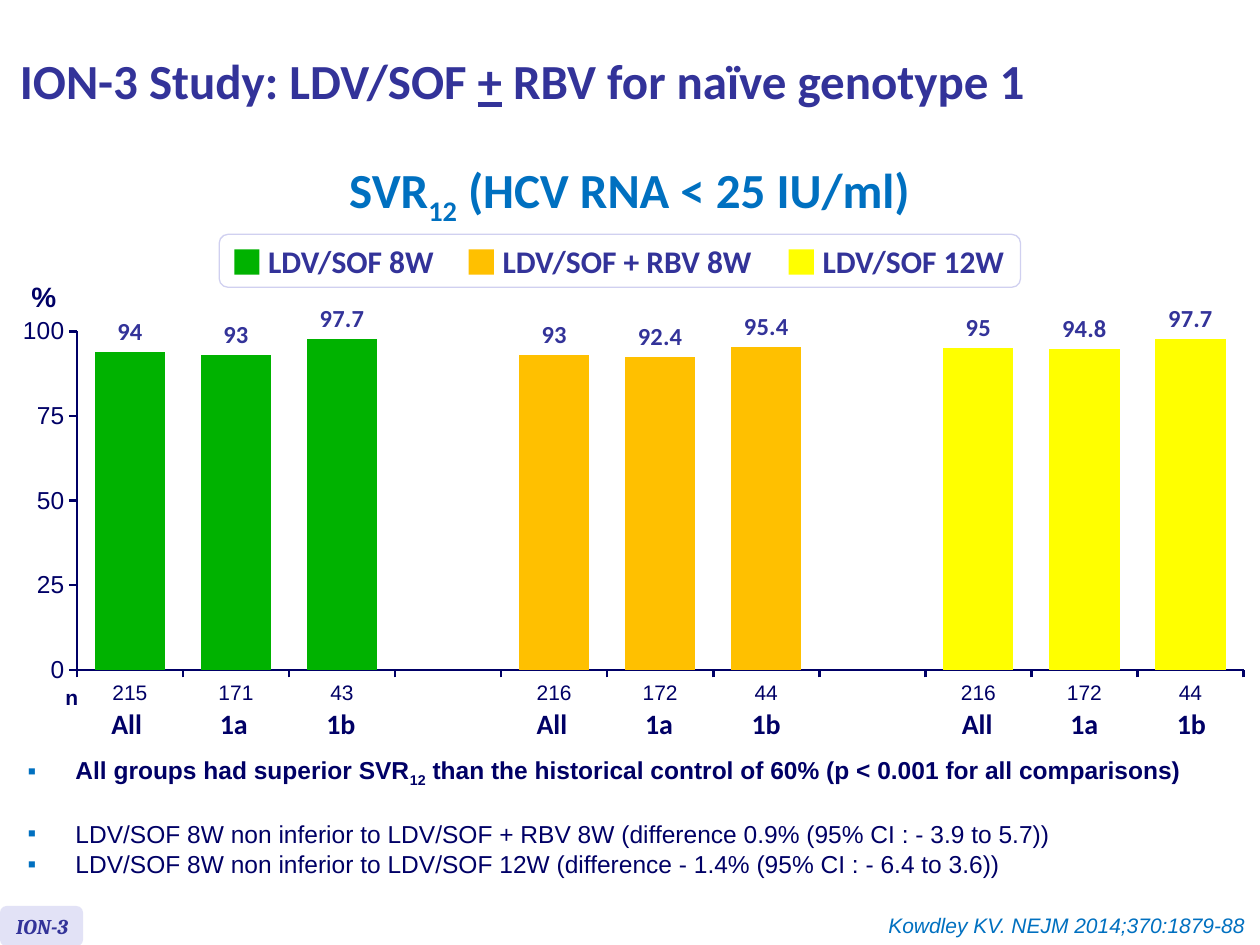
"""Build the ION-3 study slide comparing SVR12 rates across three regimens."""
from lxml import etree
from pptx import Presentation
from pptx.chart.data import CategoryChartData
from pptx.dml.color import RGBColor
from pptx.enum.chart import XL_CHART_TYPE, XL_LABEL_POSITION, XL_TICK_MARK
from pptx.enum.shapes import MSO_SHAPE
from pptx.enum.text import MSO_ANCHOR, PP_ALIGN
from pptx.oxml import parse_xml
from pptx.oxml.ns import nsdecls, qn
from pptx.util import Inches, Pt

COLORS = {
    "white": "FFFFFF",
    "indigo": "333399",
    "navy": "000066",
    "blue": "0070C0",
    "badge": "E2E2F6",
    "frame": "D0D0F0",
    "green": "00B200",
    "orange": "FFC000",
    "yellow": "FFFF00",
}
REGIMENS = [
    ("LDV/SOF 8W", "green", 1.86, 1.53, (215, 171, 43), (94, 93, 97.7)),
    ("LDV/SOF + RBV 8W", "orange", 3.72, 2.2, (216, 172, 44), (93, 92.4, 95.4)),
    ("LDV/SOF 12W", "yellow", 6.26, 1.66, (216, 172, 44), (95, 94.8, 97.7)),
]
GENOTYPES = ["All", "1a", "1b"]
GROUP_SLOTS = len(GENOTYPES) + 1
SUBSCRIPT = {"baseline": -25000}
FINDINGS = [
    ([("All groups had superior SVR", {}), ("12", SUBSCRIPT),
      (" than the historical control of 60% (p < 0.001 for all comparisons)", {})],
     True, 0),
    ([("LDV/SOF 8W non inferior to LDV/SOF + RBV 8W "
       "(difference 0.9% (95% CI : - 3.9 to 5.7))", {})], False, 17.5),
    ([("LDV/SOF 8W non inferior to LDV/SOF 12W "
       "(difference - 1.4% (95% CI : - 6.4 to 3.6))", {})], False, 0.7),
]


def rgb(color):
    """Return the named palette colour."""
    return RGBColor.from_string(COLORS[color])


def style_font(font, size, color, face="Arial", bold=False, italic=False):
    """Set the look of a font."""
    font.size, font.name, font.bold, font.italic = Pt(size), face, bold, italic
    font.color.rgb = rgb(color)


def write_run(paragraph, text, underline=False, baseline=0, **look):
    """Append formatted text to a paragraph."""
    run = paragraph.add_run()
    run.text = text
    style_font(run.font, **look)
    if underline:
        run.font.underline = True
    if baseline:
        run._r.get_or_add_rPr().set("baseline", str(baseline))


def add_text(slide, box, parts, align=PP_ALIGN.LEFT, wrap=True,
             anchor=MSO_ANCHOR.TOP, **look):
    """Add a one-paragraph text box from plain text or (text, format) parts."""
    frame = slide.shapes.add_textbox(*map(Inches, box)).text_frame
    frame.word_wrap, frame.vertical_anchor = wrap, anchor
    paragraph = frame.paragraphs[0]
    paragraph.alignment = align
    for text, extra in [(parts, {})] if isinstance(parts, str) else parts:
        write_run(paragraph, text, **look, **extra)


def add_block(slide, box, fill, preset=MSO_SHAPE.RECTANGLE, outline=None):
    """Add a filled preset shape."""
    block = slide.shapes.add_shape(preset, *map(Inches, box))
    block.shadow.inherit = False
    block.fill.solid()
    block.fill.fore_color.rgb = rgb(fill)
    if outline:
        block.line.color.rgb, block.line.width = rgb(outline), Pt(0.75)
    else:
        block.line.fill.background()


def add_legend(slide):
    """Add the framed regimen legend."""
    add_block(slide, (1.74, 1.86, 6.36, 0.42), "white",
              MSO_SHAPE.ROUNDED_RECTANGLE, "frame")
    for regimen, color, left, width, _, _ in REGIMENS:
        add_block(slide, (left, 1.98, 0.2, 0.2), color)
        add_text(slide, (left + 0.17, 1.87, width, 0.4), regimen, wrap=False,
                 size=18, color="indigo", face="Calibri", bold=True)


def style_axis(axis, size):
    """Give an axis its line, outward ticks and label font."""
    axis.has_major_gridlines = False
    axis.major_tick_mark, axis.minor_tick_mark = XL_TICK_MARK.OUTSIDE, XL_TICK_MARK.NONE
    axis.format.line.color.rgb, axis.format.line.width = rgb("navy"), Pt(1.5)
    style_font(axis.tick_labels.font, size, "navy")


def fix_plot_area(chart, x, y, w, h):
    """Pin the inner plot area to fractions of the chart."""
    area = chart._chartSpace.chart.plotArea
    for layout in area.findall(qn("c:layout")):
        area.remove(layout)
    layout = parse_xml(f'<c:layout {nsdecls("c")}><c:manualLayout/></c:layout>')
    settings = [("layoutTarget", "inner"), ("xMode", "edge"), ("yMode", "edge"),
                ("x", x), ("y", y), ("w", w), ("h", h)]
    for tag, value in settings:
        etree.SubElement(layout[0], qn(f"c:{tag}")).set("val", str(value))
    area.insert(0, layout)


def add_response_chart(slide):
    """Add the column chart of response rates, grouped by regimen."""
    patients, rates = [], []
    for _, _, _, _, counts, percents in REGIMENS:
        if patients:
            patients.append("")
            rates.append(None)
        patients.extend(map(str, counts))
        rates.extend(percents)
    data = CategoryChartData()
    data.categories = patients
    data.add_series("SVR12", rates)
    chart = slide.shapes.add_chart(
        XL_CHART_TYPE.COLUMN_CLUSTERED,
        *map(Inches, (0.02, 2.26, 10, 3.42)), data).chart
    chart.has_legend = chart.has_title = False
    style_font(chart.font, 18, "navy")
    style_axis(chart.category_axis, 12)
    style_axis(chart.value_axis, 14)
    scale = chart.value_axis
    scale.minimum_scale, scale.maximum_scale, scale.major_unit = 0, 100, 25

    plot = chart.plots[0]
    plot.gap_width, plot.vary_by_categories = 51, False
    series = plot.series[0]
    series.invert_if_negative = False
    series.format.fill.solid()
    series.format.fill.fore_color.rgb = rgb("green")
    for group, regimen in enumerate(REGIMENS):
        for slot in range(len(GENOTYPES)):
            fill = series.points[group * GROUP_SLOTS + slot].format.fill
            fill.solid()
            fill.fore_color.rgb = rgb(regimen[1])
    labels = series.data_labels
    labels.show_value, labels.position = True, XL_LABEL_POSITION.OUTSIDE_END
    style_font(labels.font, 14, "indigo", "Calibri", bold=True)
    fix_plot_area(chart, 0.059, 0.108, 0.926, 0.786)


def add_axis_captions(slide):
    """Add the unit, the patient-count mark and the genotype names."""
    add_text(slide, (0.15, 2.17, 0.4, 0.37), "%", wrap=False,
             size=16, color="navy", bold=True)
    add_text(slide, (0.42, 5.38, 0.31, 0.3), "n", wrap=False,
             size=12, color="navy", bold=True)
    for group in range(len(REGIMENS)):
        for slot, genotype in enumerate(GENOTYPES):
            left = 0.78 + 3.375 * group + 0.85 * slot
            add_text(slide, (left, 5.56, 0.45, 0.37), genotype, PP_ALIGN.CENTER,
                     wrap=False, size=16, color="navy", face="Calibri", bold=True)


def add_findings(slide):
    """Add the bulleted conclusions."""
    frame = slide.shapes.add_textbox(*map(Inches, (0.12, 5.94, 9.52, 1.21))).text_frame
    frame.word_wrap = True
    for index, (parts, bold, space) in enumerate(FINDINGS):
        paragraph = frame.add_paragraph() if index else frame.paragraphs[0]
        paragraph.space_before = Pt(space)
        props = paragraph._p.get_or_add_pPr()
        props.set("marL", str(Inches(0.38)))
        props.set("indent", str(-Inches(0.38)))
        bullet_color = etree.SubElement(props, qn("a:buClr"))
        etree.SubElement(bullet_color, qn("a:srgbClr")).set("val", COLORS["blue"])
        etree.SubElement(props, qn("a:buFont")).set("typeface", "Arial")
        etree.SubElement(props, qn("a:buChar")).set("char", "▪")
        for text, extra in parts:
            write_run(paragraph, text, size=14, color="navy", bold=bold, **extra)


def main():
    """Build and save the slide."""
    deck = Presentation()
    deck.slide_width, deck.slide_height = Inches(10), Inches(7.5)
    slide = deck.slides.add_slide(deck.slide_layouts[6])
    add_block(slide, (0, 7.19, 0.66, 0.32), "badge", MSO_SHAPE.ROUNDED_RECTANGLE)
    add_text(slide, (0.03, 7.2, 0.81, 0.3), "ION-3", size=12, color="indigo",
             face="Cambria", bold=True, italic=True)
    add_text(slide, (0.06, 0.03, 9.83, 1.21),
             [("ION-3 Study: LDV/SOF ", {}), ("+", {"underline": True}),
              (" RBV for naïve genotype 1", {})],
             anchor=MSO_ANCHOR.MIDDLE, size=28, color="indigo", face="Calibri", bold=True)
    add_text(slide, (6.17, 7.19, 3.81, 0.3), "Kowdley KV. NEJM 2014;370:1879-88",
             PP_ALIGN.RIGHT, size=12, color="blue", italic=True)
    add_text(slide, (2.59, 1.22, 4.81, 0.57),
             [("SVR", {}), ("12", SUBSCRIPT), (" (HCV RNA < 25 IU/ml)", {})],
             PP_ALIGN.CENTER, wrap=False, size=28, color="blue", face="Calibri", bold=True)
    add_legend(slide)
    add_response_chart(slide)
    add_axis_captions(slide)
    add_findings(slide)
    deck.save("out.pptx")


if __name__ == "__main__":
    main()
